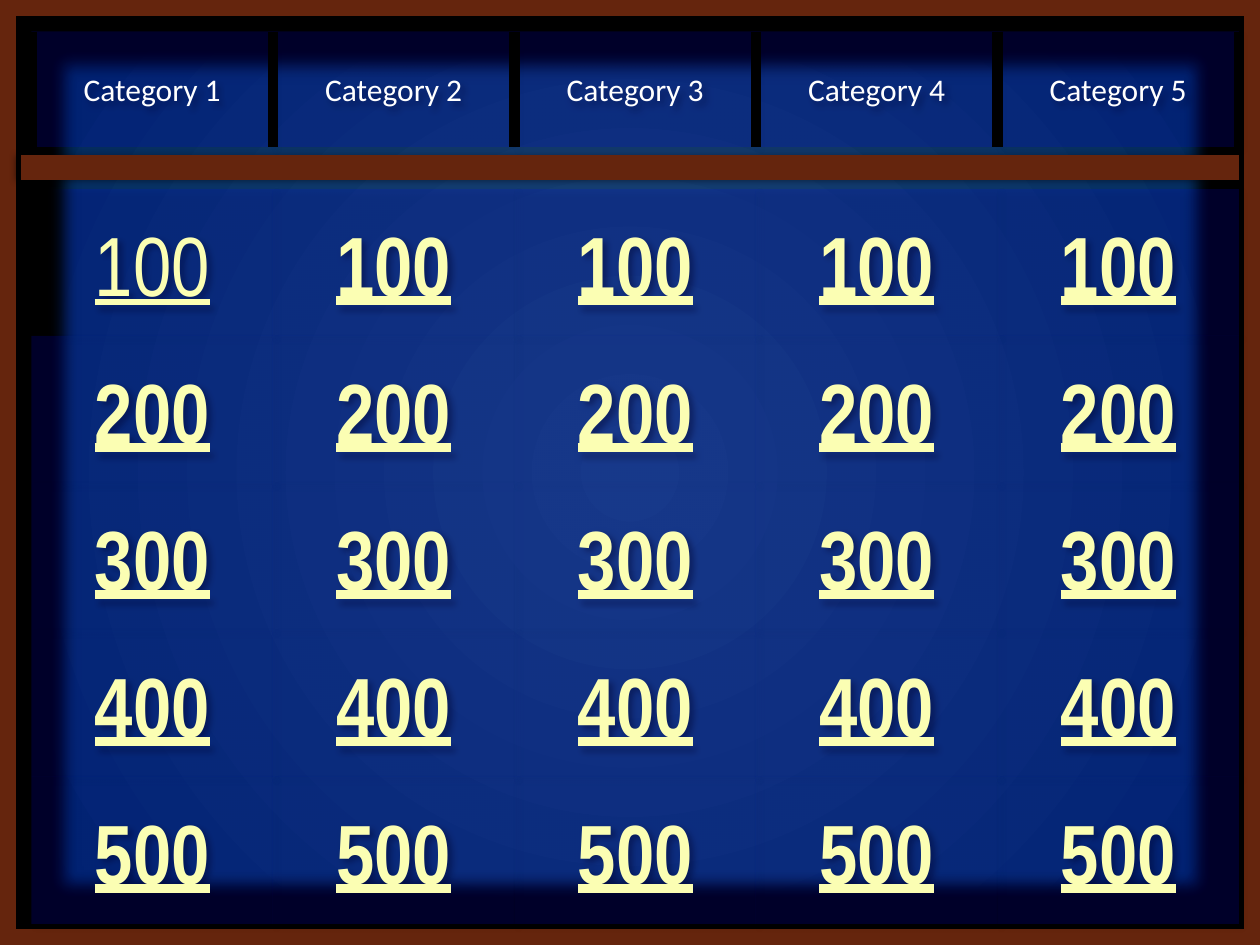
from dataclasses import dataclass

from lxml.etree import SubElement
from pptx import Presentation
from pptx.dml.color import RGBColor
from pptx.enum.shapes import MSO_CONNECTOR, MSO_SHAPE
from pptx.enum.text import MSO_ANCHOR, PP_ALIGN
from pptx.oxml.ns import qn
from pptx.util import Inches, Pt


@dataclass(frozen=True)
class Theme:
    """Colours, fonts and type sizes of the game board."""
    center: str = "1F497D"
    edge: str = "00295C"
    cell: str = "0000FF"
    cell_alpha: int = 16
    frame: str = "65250D"
    dark: str = "000000"
    bar_glow: str = "2F6B4F"
    value: str = "FBFEB3"
    label: str = "FFFFFF"
    value_font: str = "Arial Narrow"
    label_font: str = "Calibri"
    value_size: int = 48
    label_size: int = 18


def write(sp, text, *, font, size, color, bold=False, underline=False):
    """Put centred, formatted text into a shape."""
    tf = sp.text_frame
    tf.word_wrap = False
    tf.vertical_anchor = MSO_ANCHOR.MIDDLE
    p = tf.paragraphs[0]
    p.alignment = PP_ALIGN.CENTER
    r = p.add_run()
    r.text = text
    r.font.name, r.font.size = font, Pt(size)
    r.font.bold, r.font.underline = bold, underline
    r.font.color.rgb = RGBColor.from_string(color)


def add_color(parent, color, alpha):
    """Add a colour with an opacity in percent."""
    clr = SubElement(parent, qn("a:srgbClr"), val=color)
    SubElement(clr, qn("a:alpha"), val=str(alpha * 1000))


class Board:
    """Draws the board on a grid of five columns and five value rows."""
    left, top, header_top = 0.25, 1.5, 0.25
    col_w, row_h, header_h = 23 / 12, 7 / 6, 11 / 12

    def __init__(self, prs, theme):
        """Start a slide in the given theme."""
        self.prs, self.theme = prs, theme
        self.s = prs.slides.add_slide(prs.slide_layouts[6])

    def x(self, col):
        """Return the left edge of a column."""
        return Inches(self.left + col * self.col_w)

    def background(self):
        """Fill the slide with a gradient that spreads from its centre."""
        fill = self.s.background.fill
        fill.gradient()
        for stop, color in zip(fill.gradient_stops, (self.theme.center, self.theme.edge)):
            stop.color.rgb = RGBColor.from_string(color)
        for stop, position in zip(fill.gradient_stops, (0, 1)):
            stop.position = position
        grad = self.s.element.find(".//" + qn("a:gradFill"))
        grad.remove(grad.find(qn("a:lin")))
        path = SubElement(grad, qn("a:path"), path="circle")
        SubElement(path, qn("a:fillToRect"), l="50000", t="50000", r="50000", b="50000")

    def effects(self, sp, angle=None, glow=None, radius=0, alpha=100):
        """Give a shape an optional glow and an optional shadow."""
        sp_pr = sp.element.spPr
        effects = sp_pr.find(qn("a:effectLst"))
        if effects is None:
            effects = SubElement(sp_pr, qn("a:effectLst"))
        if glow:
            add_color(SubElement(effects, qn("a:glow"), rad=str(Pt(radius))), glow, alpha)
        if angle is not None:
            shadow = SubElement(effects, qn("a:outerShdw"), blurRad=str(Pt(4)),
                                dist=str(Pt(3)), dir=str(angle * 60000),
                                algn="tl", rotWithShape="0")
            add_color(shadow, self.theme.dark, 43)

    def cell(self, col, top, height, text, **style):
        """Add one translucent cell with its text."""
        sp = self.s.shapes.add_shape(MSO_SHAPE.RECTANGLE, self.x(col), Inches(top),
                                     Inches(self.col_w), Inches(height))
        sp.shadow.inherit = False
        sp.fill.solid()
        sp.fill.fore_color.rgb = RGBColor.from_string(self.theme.cell)
        clr = sp.element.spPr.find(".//" + qn("a:srgbClr"))
        SubElement(clr, qn("a:alpha"), val=str(self.theme.cell_alpha * 1000))
        sp.line.fill.background()
        self.effects(sp, angle=45)
        write(sp, text, **style)

    def value(self, col, row, bold=True):
        """Add a cell that shows the points of its row."""
        t = self.theme
        self.cell(col, self.top + row * self.row_h, self.row_h, str((row + 1) * 100),
                  font=t.value_font, size=t.value_size, color=t.value,
                  bold=bold, underline=True)

    def header(self, col):
        """Add the category cell of a column."""
        t = self.theme
        self.cell(col, self.header_top, self.header_h, f"Category {col + 1}",
                  font=t.label_font, size=t.label_size, color=t.label)

    def frame(self):
        """Outline the whole slide."""
        sp = self.s.shapes.add_shape(MSO_SHAPE.RECTANGLE, 0, 0,
                                     self.prs.slide_width, self.prs.slide_height)
        sp.shadow.inherit = False
        sp.fill.background()
        sp.line.color.rgb = RGBColor.from_string(self.theme.frame)
        sp.line.width = Pt(18)
        self.effects(sp, angle=90, glow=self.theme.dark, radius=18)

    def line(self, x1, y1, x2, y2, color, width, **effects):
        """Add a straight line."""
        ln = self.s.shapes.add_connector(MSO_CONNECTOR.STRAIGHT, x1, y1, x2, y2)
        ln.line.color.rgb = RGBColor.from_string(color)
        ln.line.width = Pt(width)
        self.effects(ln, **effects)

    def divider(self, col):
        """Add the upright line at a column edge of the header."""
        self.line(self.x(col), Inches(self.header_top), self.x(col),
                  Inches(self.header_top + self.header_h), self.theme.dark, 6)

    def bar(self):
        """Add the bar between the header and the values."""
        y = Inches(1.33)
        self.line(Inches(0.17), y, Inches(9.83), y, self.theme.frame, 14,
                  angle=180, glow=self.theme.bar_glow, radius=5, alpha=40)


def main():
    """Build the board and save it."""
    prs = Presentation()
    prs.slide_width, prs.slide_height = Inches(10), Inches(7.5)
    board = Board(prs, Theme())
    board.background()
    board.value(0, 0, bold=False)
    board.frame()
    for col in range(5):
        for row in range(0 if col else 1, 5):
            board.value(col, row)
    for col in range(5):
        board.header(col)
    for col in range(6):
        board.divider(col)
    board.bar()
    prs.save("out.pptx")


if __name__ == "__main__":
    main()
